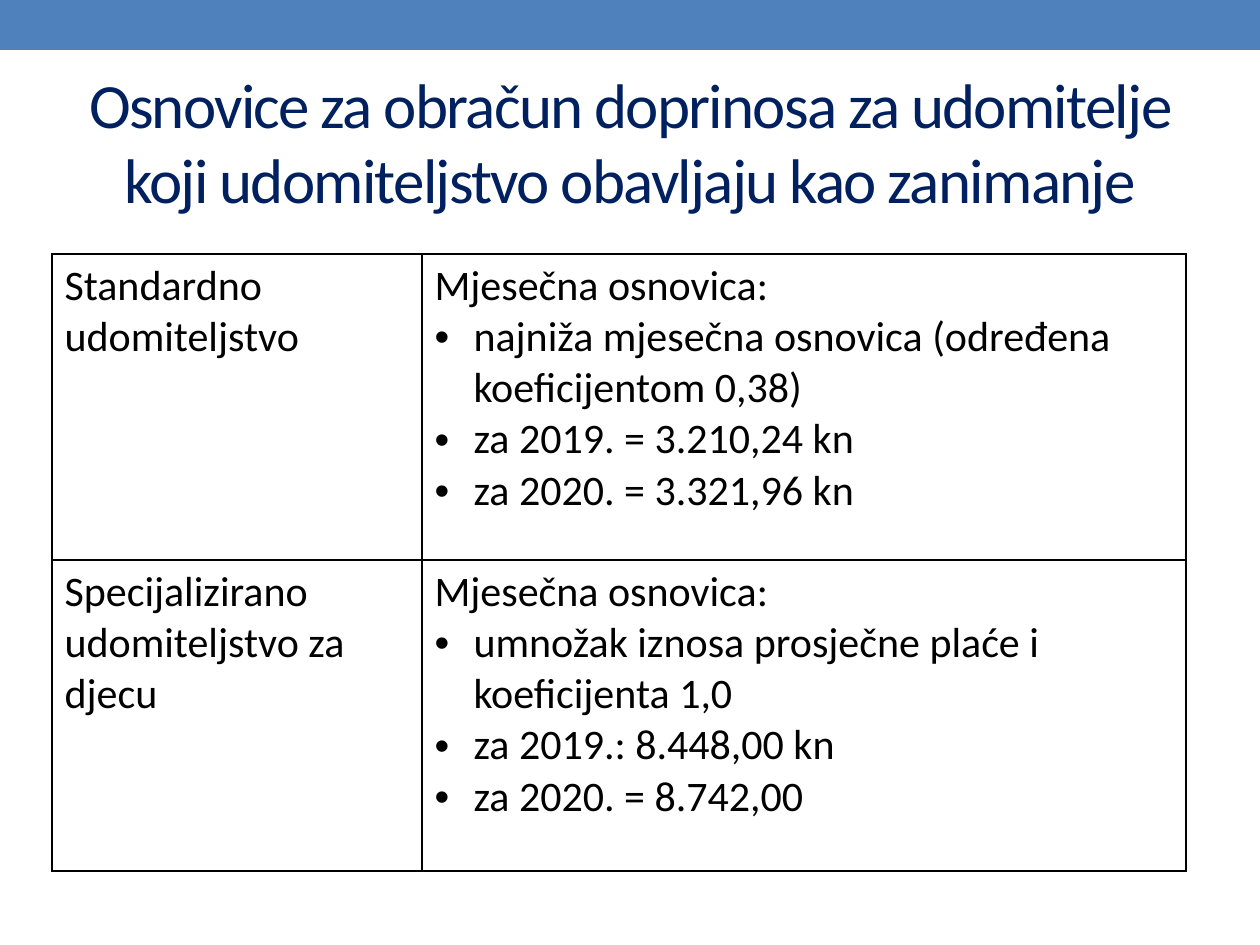
"""Build the slide on contribution bases for foster carers."""
from dataclasses import dataclass

from lxml.etree import SubElement
from pptx import Presentation
from pptx.dml.color import RGBColor
from pptx.enum.shapes import MSO_SHAPE
from pptx.enum.text import MSO_ANCHOR, PP_ALIGN
from pptx.oxml.ns import qn
from pptx.util import Pt


@dataclass(frozen=True)
class Theme:
    font: str = "Calibri"
    band: str = "4F81BD"
    title: str = "002060"
    ink: str = "000000"
    title_size: int = 36
    body_size: int = 24


THEME = Theme()
EMU_PER_PIXEL = 914400 / 126
BULLET_INDENT = 39
BORDER_SIDES = ("a:lnL", "a:lnR", "a:lnT", "a:lnB")
COLUMN_WIDTHS = (370, 764)
ROW_HEIGHTS = (306, 311)
ROWS = (
    ("Standardno udomiteljstvo", (
        "najniža mjesečna osnovica (određena koeficijentom 0,38)",
        "za 2019. = 3.210,24 kn",
        "za 2020. = 3.321,96 kn",
    )),
    ("Specijalizirano udomiteljstvo za djecu", (
        "umnožak iznosa prosječne plaće i koeficijenta 1,0",
        "za 2019.: 8.448,00 kn",
        "za 2020. = 8.742,00",
    )),
)


def px(*lengths):
    return [round(length * EMU_PER_PIXEL) for length in lengths]


def style(paragraph, size, color):
    paragraph.font.name = THEME.font
    paragraph.font.size = Pt(size)
    paragraph.font.color.rgb = RGBColor.from_string(color)


deck = Presentation()
deck.slide_width, deck.slide_height = px(1260, 945)
page = deck.slides.add_slide(deck.slide_layouts[6])

band = page.shapes.add_shape(MSO_SHAPE.RECTANGLE, *px(0, 0, 1260, 50))
band.shadow.inherit = False
band.fill.solid()
band.fill.fore_color.rgb = RGBColor.from_string(THEME.band)
band.line.fill.background()

title_box = page.shapes.add_textbox(*px(63, 73, 1134, 136))
title_box.text_frame.word_wrap = True
title_box.text_frame.vertical_anchor = MSO_ANCHOR.MIDDLE
title = title_box.text_frame.paragraphs[0]
title.text = "Osnovice za obračun doprinosa za udomitelje koji udomiteljstvo obavljaju kao zanimanje"
title.alignment = PP_ALIGN.CENTER
style(title, THEME.title_size, THEME.title)
title._p.pPr.find(qn("a:defRPr")).set("spc", "-100")

table = page.shapes.add_table(
    len(ROWS), len(COLUMN_WIDTHS), *px(52, 254, sum(COLUMN_WIDTHS), sum(ROW_HEIGHTS))
).table
table.first_row = False
table.horz_banding = False
for column, width in zip(table.columns, px(*COLUMN_WIDTHS)):
    column.width = width
for row, height in zip(table.rows, px(*ROW_HEIGHTS)):
    row.height = height

for row, (care_type, bases) in zip(table.rows, ROWS):
    type_cell, base_cell = row.cells
    type_cell.text = care_type
    base_cell.text = "\n".join(("Mjesečna osnovica:", *bases))
    for paragraph in base_cell.text_frame.paragraphs[1:]:
        properties = paragraph._p.get_or_add_pPr()
        indent = px(BULLET_INDENT)[0]
        properties.set("marL", str(indent))
        properties.set("indent", str(-indent))
        SubElement(properties, qn("a:buFont"), typeface="Arial")
        SubElement(properties, qn("a:buChar"), char="•")
    for cell in (type_cell, base_cell):
        for paragraph in cell.text_frame.paragraphs:
            style(paragraph, THEME.body_size, THEME.ink)
        cell_properties = cell._tc.get_or_add_tcPr()
        for side in BORDER_SIDES:
            border = SubElement(cell_properties, qn(side), w=str(Pt(1)))
            fill = SubElement(border, qn("a:solidFill"))
            SubElement(fill, qn("a:srgbClr"), val=THEME.ink)
        cell.fill.background()

deck.save("out.pptx")
